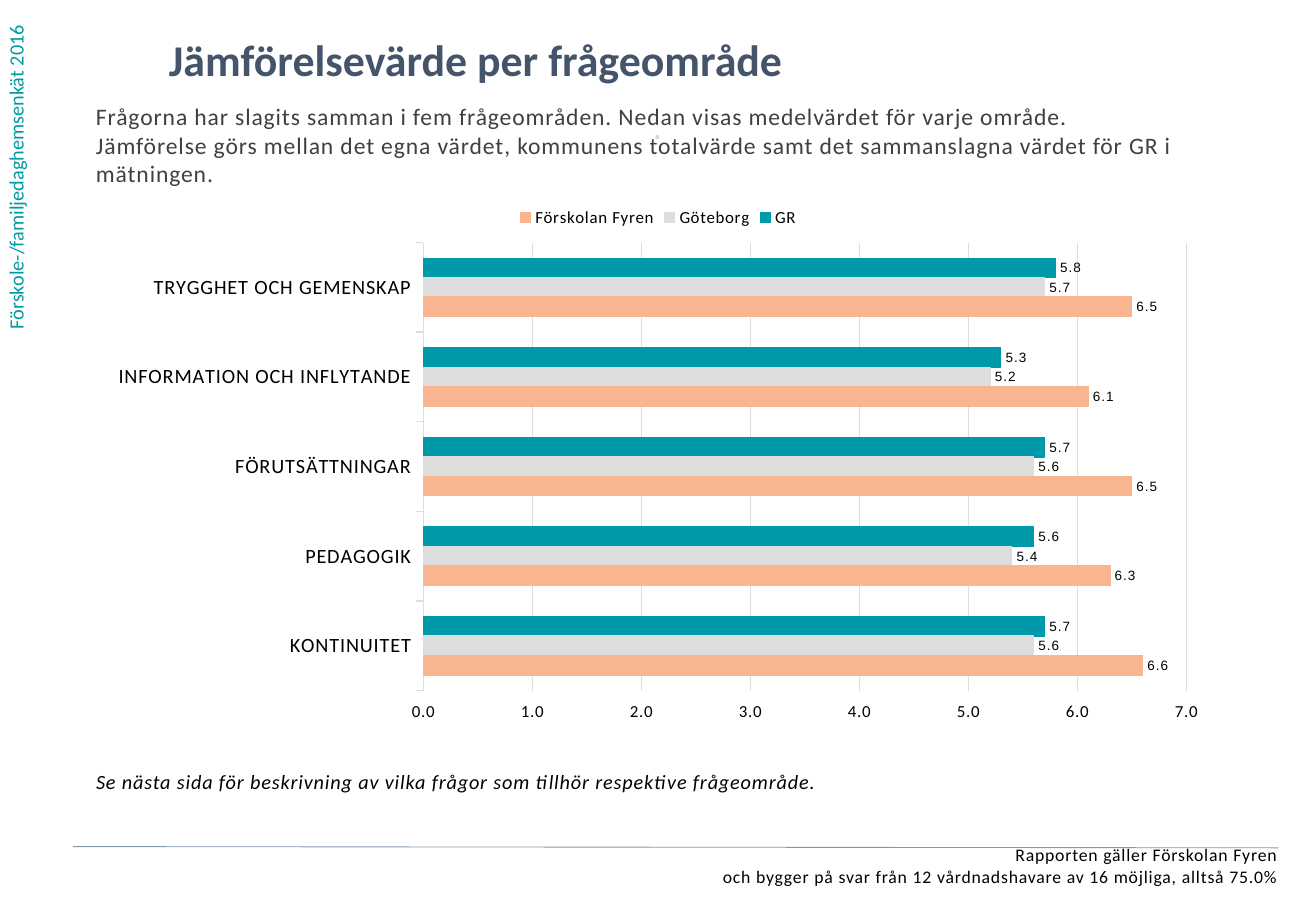
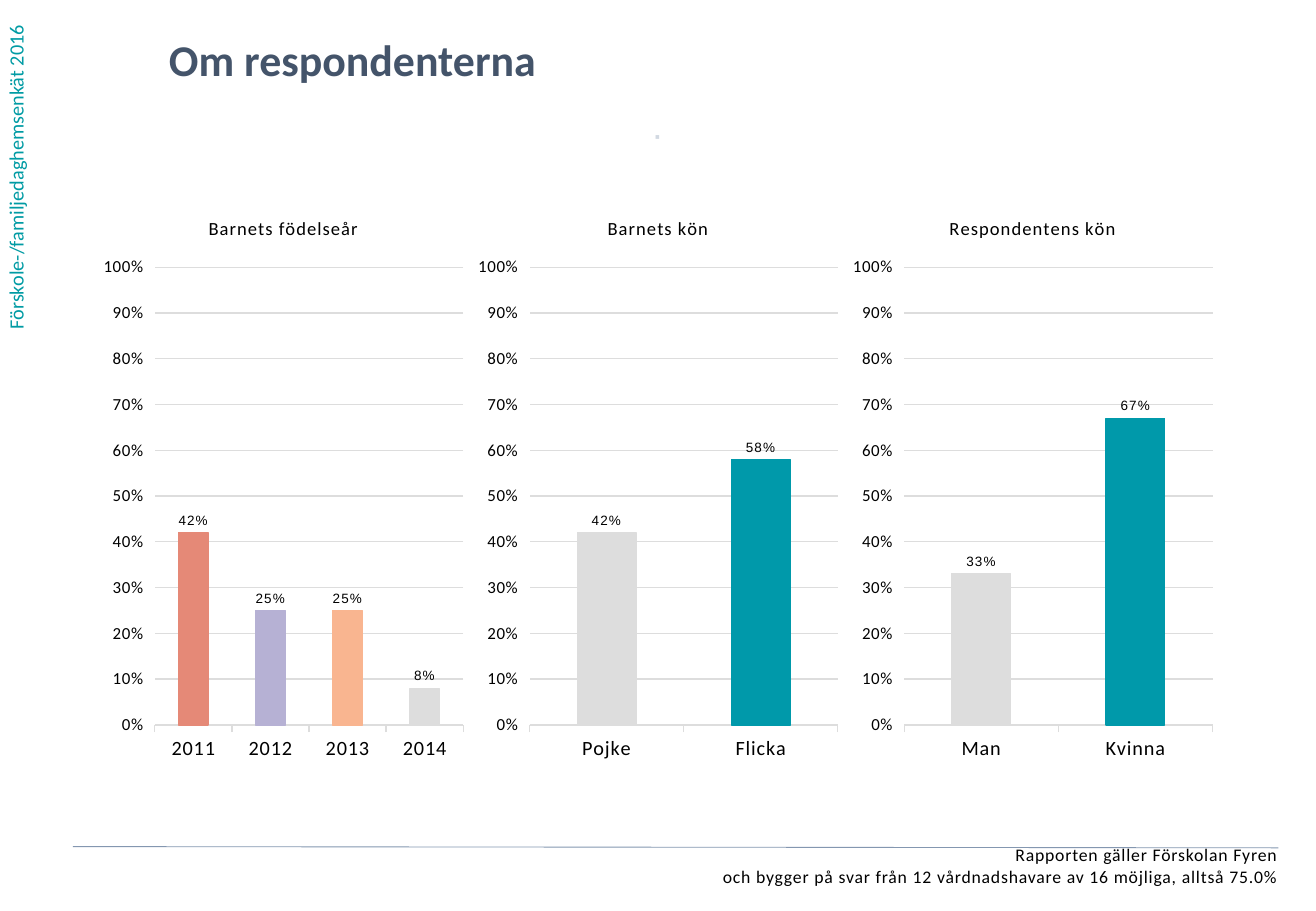
from lxml import etree
from pptx import Presentation
from pptx.chart.data import CategoryChartData
from pptx.dml.color import RGBColor
from pptx.enum.chart import XL_CHART_TYPE, XL_LABEL_POSITION, XL_LEGEND_POSITION, XL_TICK_LABEL_POSITION
from pptx.enum.shapes import MSO_CONNECTOR
from pptx.enum.text import PP_ALIGN
from pptx.oxml.ns import qn
from pptx.util import Inches, Pt

BAR, COLUMN = XL_CHART_TYPE.BAR_CLUSTERED, XL_CHART_TYPE.COLUMN_CLUSTERED
TICKS_HIGH = XL_TICK_LABEL_POSITION.HIGH
LABEL_OUTSIDE = XL_LABEL_POSITION.OUTSIDE_END
LEGEND_TOP = XL_LEGEND_POSITION.TOP
STRAIGHT = MSO_CONNECTOR.STRAIGHT
LEFT, CENTER, RIGHT = PP_ALIGN.LEFT, PP_ALIGN.CENTER, PP_ALIGN.RIGHT

BLACK, GREY, TEAL = "000000", "DDDDDD", "0099AA"
PEACH, LILAC, CORAL = "F9B590", "B6B1D4", "E58977"
SIDE_TEAL, TITLE_BLUE, BODY_GREY = "009BA4", "44546A", "404040"
DOT_BLUE, RULE_BLUE = "D2D9E2", "8497B0"

SURVEY = "Förskole-/familjedaghemsenkät 2016"
FOOTER = [
    "Rapporten gäller Förskolan Fyren",
    "och bygger på svar från 12 vårdnadshavare av 16 möjliga, alltså 75.0%",
]

AREA_TITLE = "Jämförelsevärde per frågeområde"
AREA_INTRO = [
    "Frågorna har slagits samman i fem frågeområden. Nedan visas medelvärdet för varje område.",
    "Jämförelse görs mellan det egna värdet, kommunens totalvärde samt det sammanslagna värdet för GR i mätningen.",
]
AREA_NOTE = "Se nästa sida för beskrivning av vilka frågor som tillhör respektive frågeområde."
AREAS = ["TRYGGHET OCH GEMENSKAP", "INFORMATION OCH INFLYTANDE", "FÖRUTSÄTTNINGAR", "PEDAGOGIK", "KONTINUITET"]
AREA_SCORES = [
    ("GR", [5.8, 5.3, 5.7, 5.6, 5.7], TEAL),
    ("Göteborg", [5.7, 5.2, 5.6, 5.4, 5.6], GREY),
    ("Förskolan Fyren", [6.5, 6.1, 6.5, 6.3, 6.6], PEACH),
]

RESPONDENT_TITLE = "Om respondenterna"
RESPONDENTS = [
    ("Barnets födelseår", ["2014", "2013", "2012", "2011"], [0.08, 0.25, 0.25, 0.42], [GREY, PEACH, LILAC, CORAL]),
    ("Barnets kön", ["Flicka", "Pojke"], [0.58, 0.42], [TEAL, GREY]),
    ("Respondentens kön", ["Kvinna", "Man"], [0.67, 0.33], [TEAL, GREY]),
]

CONTENT_LEFT, CONTENT_WIDTH, CHART_TOP = 0.79, 9.25, 1.6


def rgb(color):
    """Turn a hex string into a colour."""
    return RGBColor.from_string(color)


def style_font(font, size, color=BLACK, name="Calibri", bold=False, italic=False):
    """Set every visible property of a font."""
    font.size, font.name, font.bold, font.italic = Pt(size), name, bold, italic
    font.color.rgb = rgb(color)


def add_text(slide, box, lines, size, color, align=LEFT, spacing=50, inset=0, **style):
    """Add a text box whose lines are parted by line breaks."""
    frame = slide.shapes.add_textbox(*map(Inches, box)).text_frame
    frame.word_wrap = True
    frame.margin_left = frame.margin_right = Inches(inset)
    frame.margin_top = frame.margin_bottom = Inches(inset / 2)
    paragraph = frame.paragraphs[0]
    paragraph.alignment = align
    for index, line in enumerate(lines):
        if index:
            paragraph.add_line_break()
        run = paragraph.add_run()
        run.text = line
        style_font(run.font, size, color, **style)
        run.font._element.set("spc", str(spacing))
    return frame


def add_base(deck, title):
    """Add a slide with the side text, title, footer, dot and rule."""
    slide = deck.slides.add_slide(deck.slide_layouts[6])
    side = add_text(slide, (-0.02, 0, 0.4, 2.81), [SURVEY], 12, SIDE_TEAL, spacing=0, inset=0.1)
    side._txBody.bodyPr.set("vert", "vert270")
    add_text(slide, (1.39, 0.27, 8.34, 0.57), [title], 26, TITLE_BLUE, spacing=0, bold=True)
    add_text(slide, (0.12, 6.95, 10.4, 0.43), FOOTER, 10.5, BLACK, RIGHT)
    add_text(slide, (3.87, 1.02, 3.08, 0.39), ["⋅"], 12, DOT_BLUE, CENTER, bold=True)
    rule = slide.shapes.add_connector(STRAIGHT, *map(Inches, (0.6, 6.97, 10.52, 6.98)))
    rule.line.color.rgb = rgb(RULE_BLUE)
    rule.line.width = Pt(0.5)
    etree.SubElement(rule._element.spPr, qn("a:effectLst"))
    return slide


def paint(part, color):
    """Give a series or point one colour for fill and outline."""
    part.format.fill.solid()
    part.format.fill.fore_color.rgb = rgb(color)
    draw_line(part.format.line, color)


def draw_line(line, color):
    """Set a thin line."""
    line.color.rgb = rgb(color)
    line.width = Pt(0.75)


def add_survey_chart(slide, kind, box, categories, series, maximum, step, number_format, title=None, point_colors=()):
    """Add a chart in the survey style."""
    data = CategoryChartData()
    data.categories = categories
    for name, values, _ in series:
        data.add_series(name, values)
    chart = slide.shapes.add_chart(kind, *map(Inches, box), data).chart
    style_font(chart.font, 10)

    chart.has_title = title is not None
    if title:
        heading = chart.chart_title.text_frame.paragraphs[0].add_run()
        heading.text = title
        style_font(heading.font, 11)
    chart.has_legend = len(series) > 1
    if chart.has_legend:
        chart.legend.position = LEGEND_TOP
        chart.legend.include_in_layout = False
        style_font(chart.legend.font, 10)

    category_axis, value_axis = chart.category_axis, chart.value_axis
    category_axis.reverse_order = True
    style_font(category_axis.tick_labels.font, 12)
    draw_line(category_axis.format.line, GREY)
    value_axis.minimum_scale, value_axis.maximum_scale, value_axis.major_unit = 0, maximum, step
    value_axis.tick_label_position = TICKS_HIGH
    value_axis.format.line.fill.background()
    draw_line(value_axis.major_gridlines.format.line, GREY)
    style_font(value_axis.tick_labels.font, 10)
    value_axis.tick_labels.number_format = number_format
    value_axis.tick_labels.number_format_is_linked = False

    plot = chart.plots[0]
    plot.gap_width, plot.vary_by_categories = 162, False
    for bars, (_, _, color) in zip(plot.series, series):
        paint(bars, color)
        labels = bars.data_labels
        labels.show_value = True
        labels.position = LABEL_OUTSIDE
        labels.number_format = number_format
        labels.number_format_is_linked = False
        style_font(labels.font, 8, name="Arial")
        for index, point_color in enumerate(point_colors):
            paint(bars.points[index], point_color)
    for properties in chart.element.iter(qn("a:defRPr"), qn("a:rPr")):
        properties.set("spc", "50")


def add_area_slide(deck):
    """Add the comparison of question areas."""
    slide = add_base(deck, AREA_TITLE)
    add_text(slide, (CONTENT_LEFT, 0.84, 9.46, 1.01), AREA_INTRO, 14, BODY_GREY)
    add_text(slide, (CONTENT_LEFT, 6.33, CONTENT_WIDTH, 0.3), [AREA_NOTE], 12, BLACK, italic=True)
    box = (CONTENT_LEFT, CHART_TOP, CONTENT_WIDTH, 4.43)
    add_survey_chart(slide, BAR, box, AREAS, AREA_SCORES, 7, 1, "0.0;0.0")


def add_respondent_slide(deck):
    """Add the three charts about the respondents."""
    slide = add_base(deck, RESPONDENT_TITLE)
    width = CONTENT_WIDTH / len(RESPONDENTS)
    for index, (title, categories, shares, colors) in enumerate(RESPONDENTS):
        box = (CONTENT_LEFT + index * width, CHART_TOP, width, 4.76)
        add_survey_chart(slide, COLUMN, box, categories, [(title, shares, TEAL)], 1, 0.1, "0%;0%", title, colors)


def main():
    """Build and save the deck."""
    deck = Presentation()
    deck.slide_width, deck.slide_height = Inches(10.83), Inches(7.5)
    add_area_slide(deck)
    add_respondent_slide(deck)
    deck.save("out.pptx")


if __name__ == "__main__":
    main()
